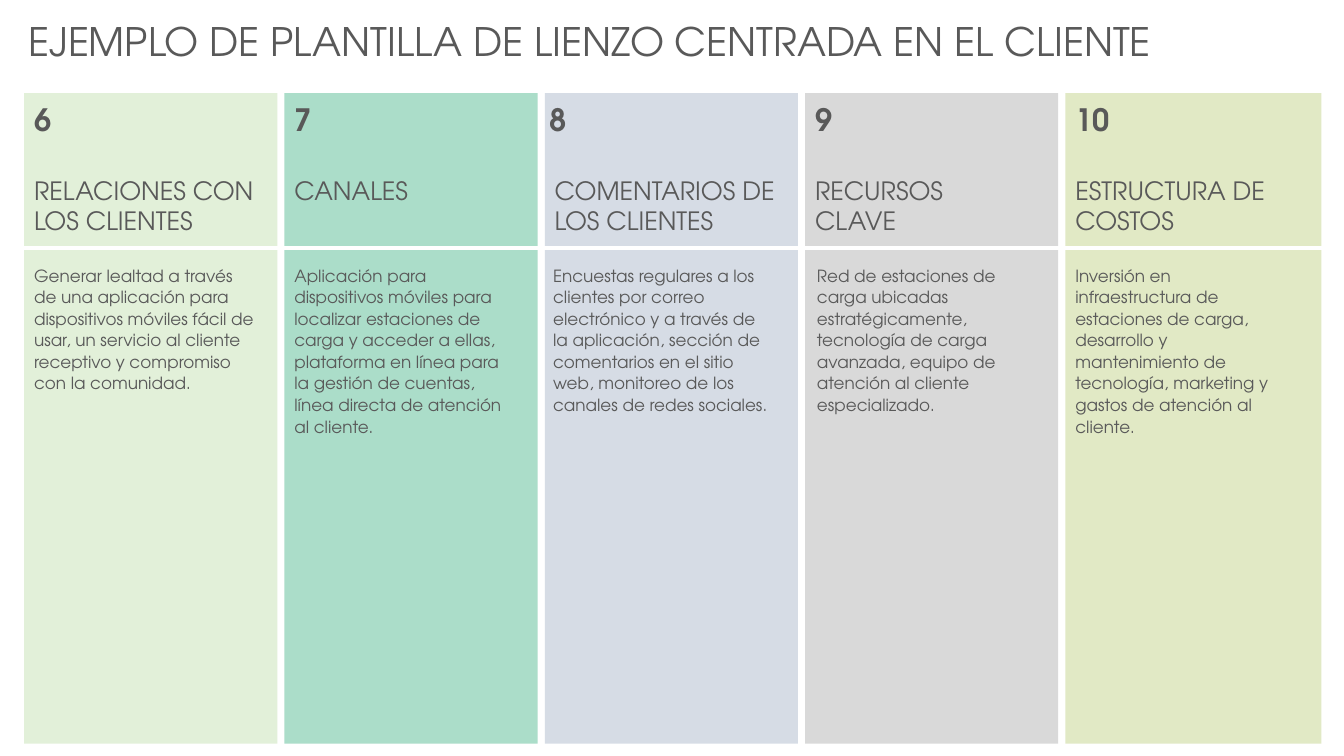
from dataclasses import dataclass

from lxml import etree
from pptx import Presentation
from pptx.dml.color import RGBColor
from pptx.enum.shapes import MSO_CONNECTOR, MSO_SHAPE
from pptx.enum.text import MSO_AUTO_SIZE as AutoSize
from pptx.oxml.ns import qn
from pptx.util import Cm, Pt

FONT = "TeX Gyre Adventor"
COLORS = {
    "text": "595959",
    "divider": "FFFFFF",
    "relations": "E2F0D9",
    "channels": "ABDDC9",
    "feedback": "D6DCE5",
    "resources": "D9D9D9",
    "costs": "E1E9C5",
}
FIRST_LEFT, COLUMN_STEP = 0.61, 6.56
CARD_TOP, CARD_HEIGHT = 2.35, 16.39
DIVIDER_TOP = 6.25


@dataclass
class Column:
    number: str
    heading: str
    body: str
    color: str
    body_width: float
    card_width: float = 6.38
    heading_height: float = 1.8
    number_width: float = 1.17
    number_shift: float = 0
    body_shift: float = 0
    body_height: float = 3.99


COLUMNS = [
    Column("6", "RELACIONES CON LOS CLIENTES",
           "Generar lealtad a través de una aplicación para dispositivos móviles "
           "fácil de usar, un servicio al cliente receptivo y compromiso con la "
           "comunidad.",
           "relations", 6.05),
    Column("7", "CANALES",
           "Aplicación para dispositivos móviles para localizar estaciones de carga "
           "y acceder a ellas, plataforma en línea para la gestión de cuentas, "
           "línea directa de atención al cliente.",
           "channels", 5.97, heading_height=1.02),
    Column("8", "COMENTARIOS DE LOS CLIENTES",
           "Encuestas regulares a los clientes por correo electrónico y a través de "
           "la aplicación, sección de comentarios en el sitio web, monitoreo de los "
           "canales de redes sociales.",
           "feedback", 5.97, number_shift=-0.12, body_shift=-0.04),
    Column("9", "RECURSOS \vCLAVE",
           "Red de estaciones de carga ubicadas estratégicamente, tecnología de "
           "carga avanzada, equipo de atención al cliente especializado.",
           "resources", 6.05, body_shift=0.05),
    Column("10", "ESTRUCTURA DE \vCOSTOS",
           "Inversión en infraestructura de estaciones de carga, desarrollo y "
           "mantenimiento de tecnología, marketing y gastos de atención al cliente.",
           "costs", 5.72, card_width=6.45, number_width=1.52, body_height=5.18),
]


def color(name):
    return RGBColor.from_string(COLORS[name])


def add_card(page, left, width, fill):
    card = page.shapes.add_shape(
        MSO_SHAPE.RECTANGLE, Cm(left), Cm(CARD_TOP), Cm(width), Cm(CARD_HEIGHT))
    card.shadow.inherit = False
    card.fill.solid()
    card.fill.fore_color.rgb = color(fill)
    card.line.fill.background()


def add_text(page, text, left, top, width, height, size, bold=False, spaced=False):
    """Add a text box; spaced text has looser lines, other text grows its box."""
    box = page.shapes.add_textbox(Cm(left), Cm(top), Cm(width), Cm(height))
    frame = box.text_frame
    frame.text = text
    frame.word_wrap = True
    frame.auto_size = AutoSize.NONE if spaced else AutoSize.SHAPE_TO_FIT_TEXT
    para = frame.paragraphs[0]
    if spaced:
        para.line_spacing = 1.07
        para.space_after = Pt(8)
    for span in para.runs:
        span.font.name = FONT
        span.font.size = Pt(size)
        span.font.bold = bold
        span.font.color.rgb = color("text")


def add_divider(page):
    line = page.shapes.add_connector(
        MSO_CONNECTOR.STRAIGHT,
        Cm(FIRST_LEFT), Cm(DIVIDER_TOP), Cm(33.53), Cm(DIVIDER_TOP))
    line.line.color.rgb = color("divider")
    line.line.width = Pt(2.25)
    etree.SubElement(line._element.spPr, qn("a:effectLst"))


def add_column_text(page, column, left):
    add_text(page, column.heading, left, 4.29, 6.35, column.heading_height, 18)
    add_text(page, column.number, left + column.number_shift, CARD_TOP,
             column.number_width, 1.63, 22, bold=True, spaced=True)
    add_text(page, column.body, left + column.body_shift, 6.53,
             column.body_width, column.body_height, 12, spaced=True)


def main():
    deck = Presentation()
    deck.slide_width, deck.slide_height = Cm(33.87), Cm(19.05)
    page = deck.slides.add_slide(deck.slide_layouts[6])

    add_text(page, "EJEMPLO DE PLANTILLA DE LIENZO CENTRADA EN EL CLIENTE",
             0.46, 0.3, 32.89, 1.45, 28)
    lefts = [FIRST_LEFT + COLUMN_STEP * index for index in range(len(COLUMNS))]
    for column, left in zip(COLUMNS, lefts):
        add_card(page, left, column.card_width, column.color)
    add_divider(page)
    for column, left in zip(COLUMNS, lefts):
        add_column_text(page, column, left)

    deck.save("out.pptx")


if __name__ == "__main__":
    main()
